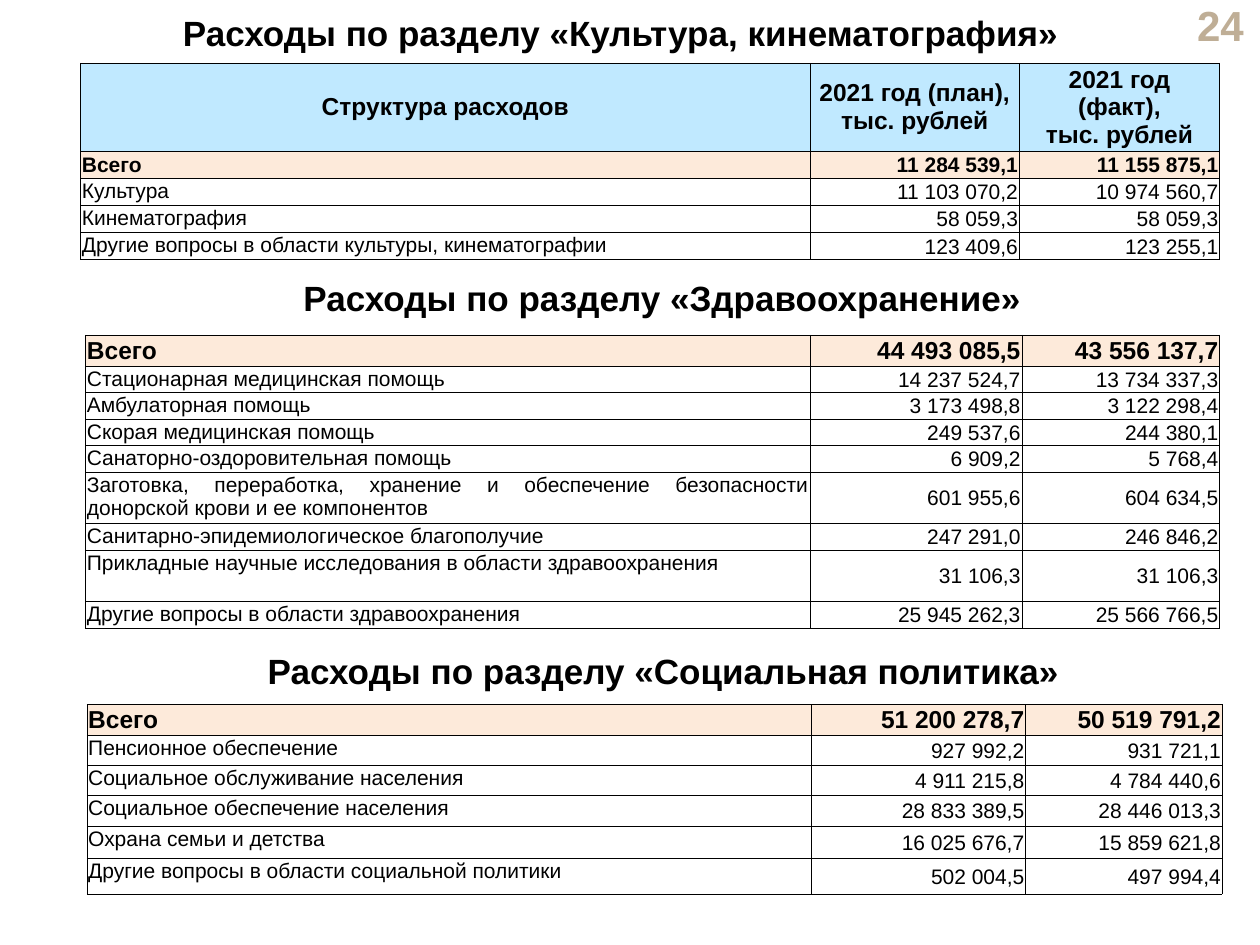
from pptx import Presentation, dml, util as u
from pptx.dml import color
from pptx.enum import text
from pptx.oxml import parse_xml
from pptx.oxml.ns import nsdecls

deck = Presentation()
deck.slide_width, deck.slide_height = u.Inches(10), u.Inches(7.5)
page = deck.slides.add_slide(deck.slide_layouts[6])
GRID = deck.slide_width // 1000
LEFT, CENTER, RIGHT, JUSTIFY = (
    text.PP_ALIGN.LEFT, text.PP_ALIGN.CENTER, text.PP_ALIGN.RIGHT, text.PP_ALIGN.JUSTIFY)
HEADER, TOTAL, ITEM = "C0E9FF", "FDEADA", "FFFFFF"


def write(para, words, size, align, bold=True, ink="000000"):
    para.text = words
    para.alignment = align
    para.font.name = "Arial"
    para.font.size = u.Pt(size)
    para.font.bold = bold
    para.font.color.rgb = color.RGBColor.from_string(ink)


def add_heading(words, area, size=20, align=CENTER, ink="000000", anchor=text.MSO_ANCHOR.TOP):
    box = page.shapes.add_textbox(*(GRID * side for side in area))
    frame = box.text_frame
    frame.word_wrap = True
    frame.vertical_anchor = anchor
    write(frame.paragraphs[0], words, size, align, ink=ink)
    frame.paragraphs[0].line_spacing = 0.9


add_heading("24", (933, 5, 64, 34), 24, RIGHT, "BFAE96", text.MSO_ANCHOR.MIDDLE)

sections = [
    dict(
        title="Расходы по разделу «Культура, кинематография»", title_area=(50, 8, 885, 47),
        origin=(64, 50), columns=(579, 166, 159), heights=[70] + [21.5] * 4,
        total_size=12, justified={4},
        rows=[
            ("Структура расходов", "2021 год (план),\vтыс. рублей", "2021 год (факт),\vтыс. рублей"),
            ("Всего", "11 284 539,1", "11 155 875,1"),
            ("Культура", "11 103 070,2", "10 974 560,7"),
            ("Кинематография", "58 059,3", "58 059,3"),
            ("Другие вопросы в области культуры, кинематографии", "123 409,6", "123 255,1"),
        ],
    ),
    dict(
        title="Расходы по разделу «Здравоохранение»", title_area=(61, 218, 929, 49),
        origin=(68, 266), columns=(575, 168, 157),
        heights=[22] + [19] * 4 + [37, 19, 41, 19],
        total_size=14, justified={5, 6, 7},
        rows=[
            ("Всего", "44 493 085,5", "43 556 137,7"),
            ("Стационарная медицинская помощь", "14 237 524,7", "13 734 337,3"),
            ("Амбулаторная помощь", "3 173 498,8", "3 122 298,4"),
            ("Скорая медицинская помощь", "249 537,6", "244 380,1"),
            ("Санаторно-оздоровительная помощь", "6 909,2", "5 768,4"),
            ("Заготовка, переработка, хранение и обеспечение безопасности донорской крови и ее компонентов",
             "601 955,6", "604 634,5"),
            ("Санитарно-эпидемиологическое благополучие", "247 291,0", "246 846,2"),
            ("Прикладные научные исследования в области здравоохранения", "31 106,3", "31 106,3"),
            ("Другие вопросы в области здравоохранения", "25 945 262,3", "25 566 766,5"),
        ],
    ),
    dict(
        title="Расходы по разделу «Социальная политика»", title_area=(84, 514, 885, 62),
        origin=(69, 559), columns=(575, 170, 156), heights=[24] * 4 + [26, 28],
        total_size=14, justified=set(),
        rows=[
            ("Всего", "51 200 278,7", "50 519 791,2"),
            ("Пенсионное обеспечение", "927 992,2", "931 721,1"),
            ("Социальное обслуживание населения", "4 911 215,8", "4 784 440,6"),
            ("Социальное обеспечение населения", "28 833 389,5", "28 446 013,3"),
            ("Охрана семьи и детства", "16 025 676,7", "15 859 621,8"),
            ("Другие вопросы в области социальной политики", "502 004,5", "497 994,4"),
        ],
    ),
]

for section in sections:
    add_heading(section["title"], section["title_area"])
    rows, columns, heights = section["rows"], section["columns"], section["heights"]
    left, top = section["origin"]
    table = page.shapes.add_table(
        len(rows), len(columns), GRID * left, GRID * top,
        GRID * sum(columns), int(GRID * sum(heights))).table
    for column, width in zip(table.columns, columns):
        column.width = GRID * width
    for row, height in zip(table.rows, heights):
        row.height = int(GRID * height)

    for row_index, values in enumerate(rows):
        header = values[0] == "Структура расходов"
        total = values[0] == "Всего"
        label_align = JUSTIFY if row_index in section["justified"] else LEFT
        size = 14 if header else section["total_size"] if total else 12
        for column_index, value in enumerate(values):
            cell = table.cell(row_index, column_index)
            label = column_index == 0
            cell.margin_left = cell.margin_right = GRID * (4 if header else 1)
            cell.margin_top, cell.margin_bottom = GRID * (0 if header else 1), 0
            top_anchored = label and not (header or total)
            cell.vertical_anchor = text.MSO_ANCHOR.TOP if top_anchored else text.MSO_ANCHOR.MIDDLE
            align = CENTER if header else label_align if label else RIGHT
            write(cell.text_frame.paragraphs[0], value, size, align, header or total)
            properties = cell._tc.get_or_add_tcPr()
            for edge in ("lnL", "lnR", "lnT", "lnB"):
                properties.append(parse_xml(
                    f'<a:{edge} {nsdecls("a")} w="{u.Pt(0.25)}"><a:solidFill>'
                    f'<a:srgbClr val="000000"/></a:solidFill></a:{edge}>'))
            cell.fill.solid()
            cell.fill.fore_color.rgb = color.RGBColor.from_string(
                HEADER if header else TOTAL if total else ITEM)

deck.save("out.pptx")
